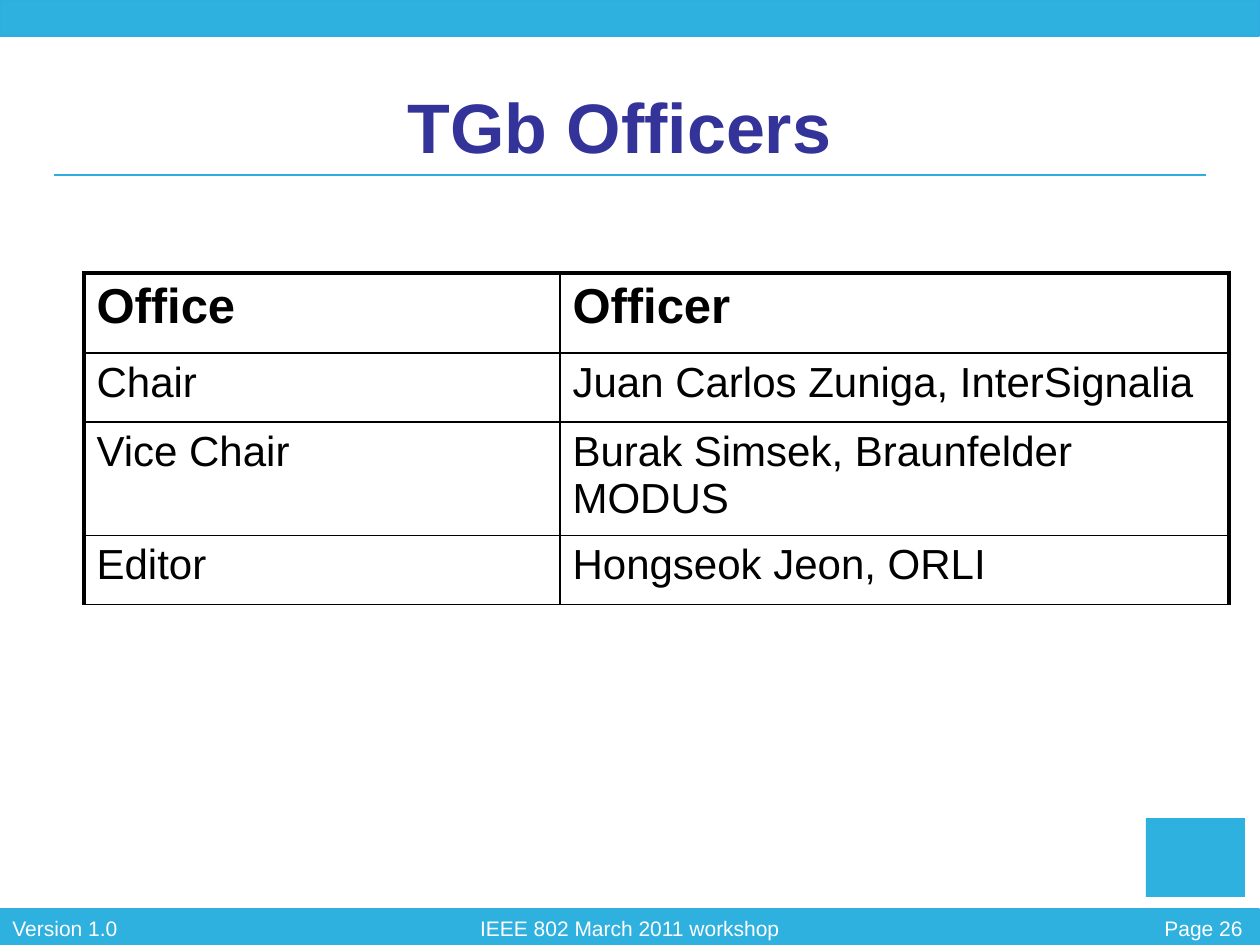
from dataclasses import dataclass

import pptx
import pptx.dml.color
import pptx.enum.shapes
import pptx.enum.text
import pptx.oxml.ns
import pptx.util
from lxml import etree

SCALE = 914400 / 126
FONT = "Arial"
COLORS = {"band": "2FB1DF", "edge": "2FADDF", "title": "333399",
          "text": "000000", "white": "FFFFFF"}
ALIGN = pptx.enum.text.PP_ALIGN
ANCHOR = pptx.enum.text.MSO_ANCHOR


@dataclass
class Box:
    left: int
    top: int
    width: int
    height: int


@dataclass
class Label:
    text: str
    box: Box
    align: ALIGN = ALIGN.LEFT
    size: int = 12
    color: str = "white"
    bold: bool = False
    wrap: bool = True


@dataclass
class Band:
    box: Box
    line: str = ""


BANDS = [
    Band(Box(0, 909, 1259, 36), "band"),
    Band(Box(0, 0, 1259, 36), "edge"),
    Band(Box(1146, 818, 99, 79)),
]
LABELS = [
    Label("Page 26", Box(1096, 909, 159, 38), ALIGN.RIGHT),
    Label("Version 1.0", Box(0, 909, 131, 38), wrap=False),
    Label("IEEE 802 March 2011 workshop", Box(0, 909, 1260, 38), ALIGN.CENTER),
    Label("TGb Officers", Box(84, 84, 1071, 84), ALIGN.CENTER, 40, "title", True),
]
ROWS = [
    ("Office", "Officer"),
    ("Chair", "Juan Carlos Zuniga, InterSignalia"),
    ("Vice Chair", "Burak Simsek, Braunfelder MODUS"),
    ("Editor", "Hongseok Jeon, ORLI"),
]
COLS = [476, 669]
HEIGHTS = [80, 69, 107, 69]


def emu(px: int) -> int:
    return round(px * SCALE)


def place(box: Box) -> list[int]:
    return [emu(px) for px in (box.left, box.top, box.width, box.height)]


def rgb(name: str) -> pptx.dml.color.RGBColor:
    return pptx.dml.color.RGBColor.from_string(COLORS[name])


def style(frame, size: int, color: str, bold: bool) -> None:
    for para in frame.paragraphs:
        for run in para.runs:
            run.font.name = FONT
            run.font.size = pptx.util.Pt(size)
            run.font.bold = bold
            run.font.color.rgb = rgb(color)


def draw_band(slide, band: Band) -> None:
    shape = slide.shapes.add_shape(
        pptx.enum.shapes.MSO_SHAPE.RECTANGLE, *place(band.box))
    shape.shadow.inherit = False
    shape.fill.solid()
    shape.fill.fore_color.rgb = rgb("band")
    if band.line:
        shape.line.color.rgb = rgb(band.line)
        shape.line.width = pptx.util.Pt(0.75)
    else:
        shape.line.fill.background()


def draw_rule(slide, left: int, right: int, top: int) -> None:
    rule = slide.shapes.add_connector(
        pptx.enum.shapes.MSO_CONNECTOR.STRAIGHT,
        emu(left), emu(top), emu(right), emu(top))
    rule.line.color.rgb = rgb("edge")
    rule.line.width = pptx.util.Pt(0.75)
    etree.SubElement(rule._element.spPr, pptx.oxml.ns.qn("a:effectLst"))


def draw_label(slide, label: Label) -> None:
    frame = slide.shapes.add_textbox(*place(label.box)).text_frame
    frame.text = label.text
    frame.word_wrap = label.wrap
    frame.vertical_anchor = ANCHOR.MIDDLE if label.bold else ANCHOR.TOP
    frame.paragraphs[0].alignment = label.align
    style(frame, label.size, label.color, label.bold)


def set_edges(cell, widths: dict[str, float]) -> None:
    """Give each side of a cell a solid line; call before setting the fill."""
    props = cell._tc.get_or_add_tcPr()
    for side, width in widths.items():
        line = etree.SubElement(props, pptx.oxml.ns.qn(f"a:ln{side}"),
                                w=str(pptx.util.Pt(width)))
        fill = etree.SubElement(line, pptx.oxml.ns.qn("a:solidFill"))
        etree.SubElement(fill, pptx.oxml.ns.qn("a:srgbClr"), val=COLORS["text"])


def draw_table(slide, left: int, top: int) -> None:
    box = Box(left, top, sum(COLS), sum(HEIGHTS))
    table = slide.shapes.add_table(len(ROWS), len(COLS), *place(box)).table
    table.first_row = table.horz_banding = False
    for col, width in zip(table.columns, COLS):
        col.width = emu(width)
    for r, texts in enumerate(ROWS):
        table.rows[r].height = emu(HEIGHTS[r])
        for c, text in enumerate(texts):
            cell = table.cell(r, c)
            cell.text_frame.text = text
            style(cell.text_frame, 24 if r else 28, "text", r == 0)
            set_edges(cell, {
                "L": 2.25 if c == 0 else 1,
                "R": 2.25 if c == len(COLS) - 1 else 1,
                "T": 2.25 if r == 0 else 1,
                "B": 1,
            })
            cell.fill.background()


def main() -> None:
    deck = pptx.Presentation()
    deck.slide_width, deck.slide_height = emu(1260), emu(945)
    slide = deck.slides.add_slide(deck.slide_layouts[6])
    for band in BANDS:
        draw_band(slide, band)
    draw_rule(slide, 54, 1206, 175)
    for label in LABELS:
        draw_label(slide, label)
    draw_table(slide, 84, 273)
    deck.save("out.pptx")


if __name__ == "__main__":
    main()
